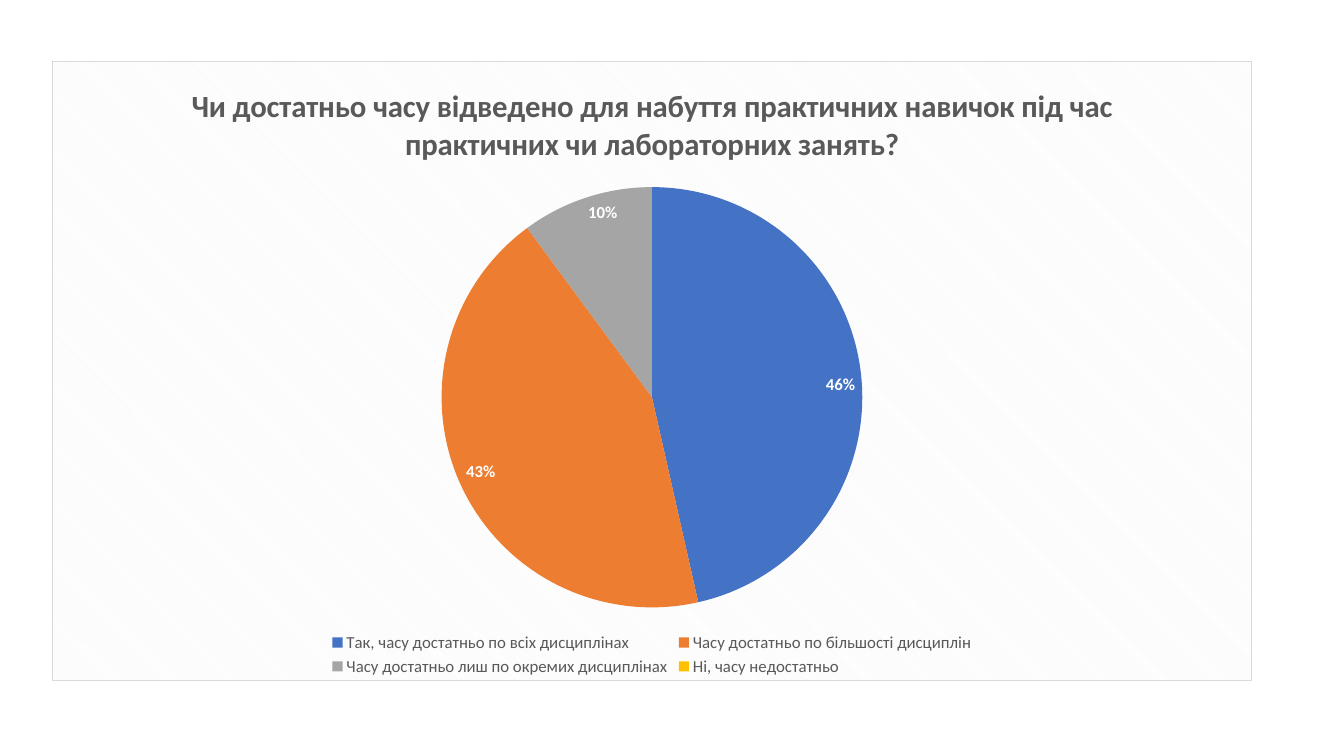
from lxml import etree
from pptx import Presentation
from pptx.chart.data import CategoryChartData
from pptx.dml.color import RGBColor
from pptx.enum.chart import XL_CHART_TYPE, XL_LABEL_POSITION, XL_LEGEND_POSITION
from pptx.oxml import parse_xml
from pptx.oxml.ns import nsdecls, qn
from pptx.util import Pt

PIE = XL_CHART_TYPE.PIE
INSIDE_END = XL_LABEL_POSITION.INSIDE_END
BOTTOM = XL_LEGEND_POSITION.BOTTOM

EMU_PER_PX = 914400 / 100.8
SLIDE_SIZE = (1344, 756)
BLANK_LAYOUT = 6

BLACK = RGBColor(0x00, 0x00, 0x00)
WHITE = RGBColor(0xFF, 0xFF, 0xFF)
GRAY = RGBColor(0x59, 0x59, 0x59)
HATCH = RGBColor(0xF2, 0xF2, 0xF2)
BORDER = RGBColor(0xD9, 0xD9, 0xD9)
BLUE = RGBColor(0x44, 0x72, 0xC4)
ORANGE = RGBColor(0xED, 0x7D, 0x31)
SILVER = RGBColor(0xA5, 0xA5, 0xA5)
YELLOW = RGBColor(0xFF, 0xC0, 0x00)

QUESTION = ("Чи достатньо часу відведено для набуття практичних навичок "
            "під час практичних чи лабораторних занять?")
ANSWERS = [
    ("Так, часу достатньо по всіх дисциплінах", 46, BLUE),
    ("Часу достатньо по більшості дисциплін", 43, ORANGE),
    ("Часу достатньо лиш по окремих дисциплінах", 10, SILVER),
    ("Ні, часу недостатньо", 0, YELLOW),
]


def px(length):
    return round(length * EMU_PER_PX)


class SurveySlide:
    """Holds the font and the slide being built."""

    font_name = "Calibri"

    def __init__(self, presentation):
        self.slide = presentation.slides.add_slide(
            presentation.slide_layouts[BLANK_LAYOUT])

    def style(self, font, size, color, bold=False):
        font.name = self.font_name
        font.size = Pt(size)
        font.bold = bold
        font.color.rgb = color

    def pie(self, left, top, width, height, question, answers):
        survey = CategoryChartData()
        survey.categories = [answer for answer, _, _ in answers]
        survey.add_series(question, [share for _, share, _ in answers])
        chart = self.slide.shapes.add_chart(
            PIE, px(left), px(top), px(width), px(height), survey).chart
        self.style(chart.font, 10, BLACK)
        self.title(chart, question)
        self.legend(chart)
        self.slices(chart, answers)
        self.frame(chart)

    def title(self, chart, question):
        chart.has_title = True
        chart.chart_title.include_in_layout = False
        heading = chart.chart_title.text_frame.paragraphs[0]
        heading.text = question
        self.style(heading.runs[0].font, 22, GRAY, bold=True)

    def legend(self, chart):
        chart.has_legend = True
        chart.legend.position = BOTTOM
        chart.legend.include_in_layout = False
        self.style(chart.legend.font, 12, GRAY)

    def slices(self, chart, answers):
        chart.plots[0].vary_by_categories = True
        shares = chart.plots[0].series[0]
        labels = shares.data_labels
        labels.show_value = False
        labels.show_percentage = True
        labels.number_format = "0%"
        labels.number_format_is_linked = False
        labels.position = INSIDE_END
        self.style(labels.font, 12, WHITE, bold=True)
        for index, (_, share, color) in enumerate(answers):
            fill = shares.points[index].format.fill
            fill.solid()
            fill.fore_color.rgb = color
            if not share:
                self.hide_label(labels, index)

    def hide_label(self, labels, index):
        hidden = parse_xml(
            f'<c:dLbl {nsdecls("c")}><c:idx val="{index}"/>'
            '<c:delete val="1"/></c:dLbl>')
        labels._element.insert(0, hidden)

    def frame(self, chart):
        """Hatched background and thin border of the chart area."""
        area = etree.fromstring(
            f'<c:spPr {nsdecls("c", "a")}>'
            '<a:pattFill prst="dkDnDiag">'
            f'<a:fgClr><a:srgbClr val="{HATCH}"/></a:fgClr>'
            f'<a:bgClr><a:srgbClr val="{WHITE}"/></a:bgClr></a:pattFill>'
            f'<a:ln w="{Pt(0.75)}"><a:solidFill><a:srgbClr val="{BORDER}"/>'
            '</a:solidFill></a:ln></c:spPr>')
        chart._chartSpace.find(qn("c:chart")).addnext(area)


def main():
    presentation = Presentation()
    presentation.slide_width, presentation.slide_height = map(px, SLIDE_SIZE)
    # Survey question with the shares of its answers
    SurveySlide(presentation).pie(52, 61, 1200, 620, QUESTION, ANSWERS)
    presentation.save("out.pptx")


if __name__ == "__main__":
    main()
